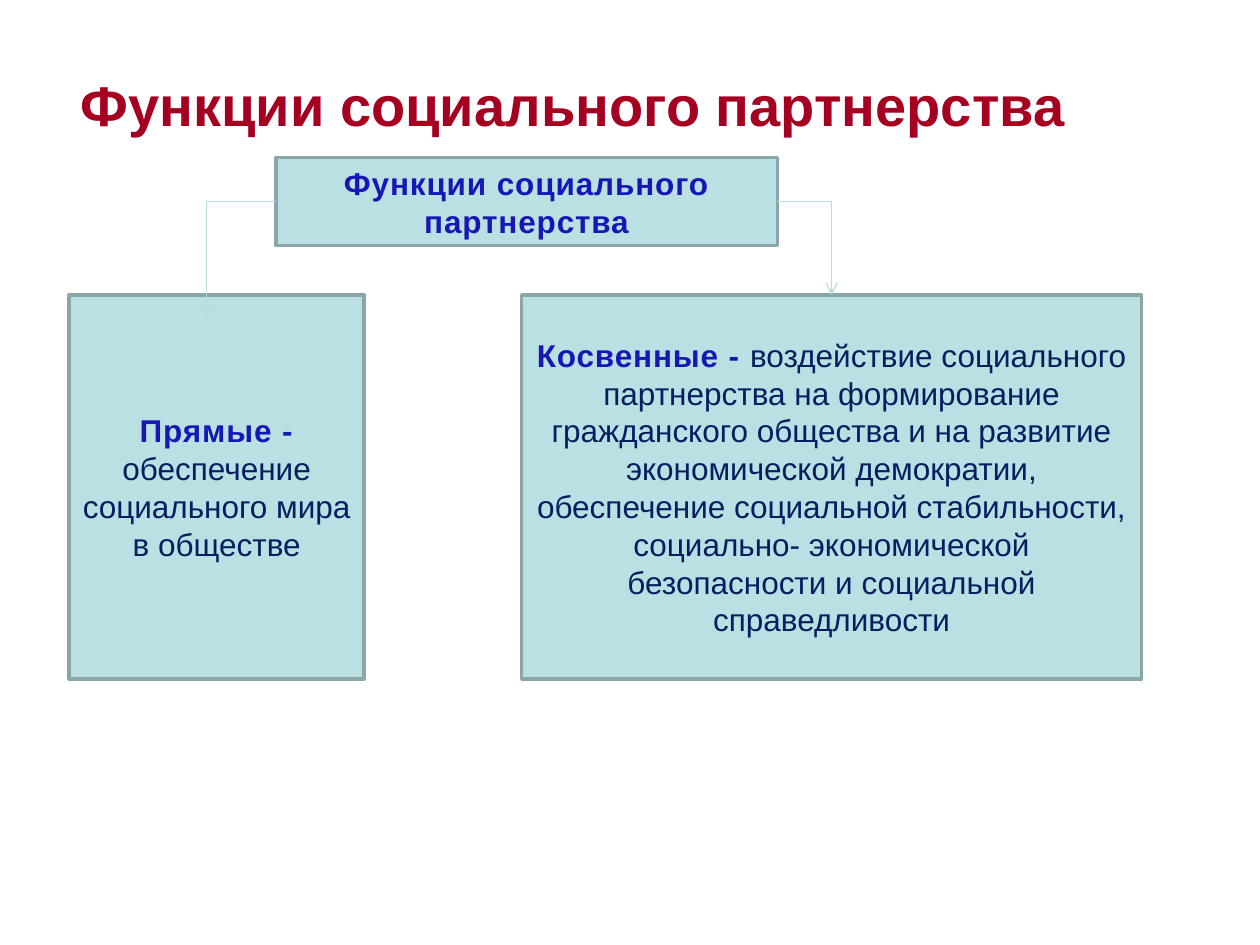
from lxml.etree import SubElement
from pptx import Presentation
from pptx.dml.color import RGBColor
from pptx.enum.shapes import MSO_CONNECTOR, MSO_SHAPE
from pptx.enum.text import MSO_ANCHOR, PP_ALIGN
from pptx.oxml.ns import qn
from pptx.util import Inches, Pt

RED = RGBColor(0xA5, 0x00, 0x21)
PALE = RGBColor(0xBB, 0xE0, 0xE3)
BORDER = RGBColor(0x8A, 0xA6, 0xA8)
ARROW = RGBColor(0xB6, 0xDC, 0xDF)
NAVY = RGBColor(0x00, 0x20, 0x60)
GRADIENT = [(0.25, RGBColor(0x17, 0x17, 0xB5)), (1, RGBColor(0x0D, 0x0D, 0x84))]

TITLE = "Функции социального партнерства "
HUB = ("Функции социального партнерства", "", (2.19, 1.25, 3.98, 0.7))
DIRECT = (
    "Прямые - ",
    "обеспечение социального мира в обществе",
    (0.55, 2.34, 2.34, 3.05),
)
INDIRECT = (
    "Косвенные - ",
    "воздействие социального партнерства на формирование гражданского общества "
    "и на развитие экономической демократии, обеспечение социальной стабильности, "
    "социально- экономической безопасности и социальной справедливости",
    (4.14, 2.34, 4.92, 3.05),
)


def start_text(shape, size):
    frame = shape.text_frame
    frame.word_wrap = True
    frame.vertical_anchor = MSO_ANCHOR.MIDDLE
    para = frame.paragraphs[0]
    para.alignment = PP_ALIGN.CENTER
    para.font.name = "Arial"
    para.font.size = Pt(size)
    return para


def add_span(para, text, size):
    span = para.add_run()
    span.text = text
    span.font.name = "Arial"
    span.font.size = Pt(size)
    return span


def add_box(page, lead, detail, place):
    box = page.shapes.add_shape(MSO_SHAPE.RECTANGLE, *map(Inches, place))
    box.shadow.inherit = False
    box.fill.solid()
    box.fill.fore_color.rgb = PALE
    box.line.color.rgb = BORDER
    box.line.width = Pt(2)
    para = start_text(box, 18)
    span = add_span(para, lead, 18)
    span.font.bold = True
    fill = span.font.fill
    fill.gradient()
    fill.gradient_angle = 270
    for stop, (position, color) in zip(fill.gradient_stops, GRADIENT):
        stop.position = position
        stop.color.rgb = color
    span.font._element.set("spc", "50")
    if detail:
        span = add_span(para, detail, 18)
        span.font.color.rgb = NAVY
    return box


def add_arrow(page, start, end):
    arrow = page.shapes.add_connector(MSO_CONNECTOR.ELBOW, *map(Inches, start + end))
    arrow.line.color.rgb = ARROW
    arrow.line.width = Pt(0.75)
    properties = arrow._element.spPr
    properties.find(qn("a:prstGeom")).set("prst", "bentConnector2")
    SubElement(properties.find(qn("a:ln")), qn("a:tailEnd"), type="arrow")
    SubElement(properties, qn("a:effectLst"))
    return arrow


def main():
    deck = Presentation()
    deck.slide_width, deck.slide_height = Inches(10), Inches(7.5)
    page = deck.slides.add_slide(deck.slide_layouts[6])

    title = page.shapes.add_textbox(Inches(0), Inches(0.31), Inches(9.22), Inches(1.03))
    span = add_span(start_text(title, 32), TITLE, 32)
    span.font.bold = True
    span.font.color.rgb = RED

    hub, direct, indirect = [add_box(page, *item) for item in (HUB, DIRECT, INDIRECT)]

    left, top, width, height = HUB[2]
    middle = top + height / 2
    add_arrow(page, (left, middle), (1.64, 2.5)).begin_connect(hub, 1)

    target_left, target_top, target_width, _ = INDIRECT[2]
    target = (target_left + target_width / 2, target_top)
    arrow = add_arrow(page, (left + width, middle), target)
    arrow.begin_connect(hub, 3)
    arrow.end_connect(indirect, 0)

    deck.save("out.pptx")


if __name__ == "__main__":
    main()
